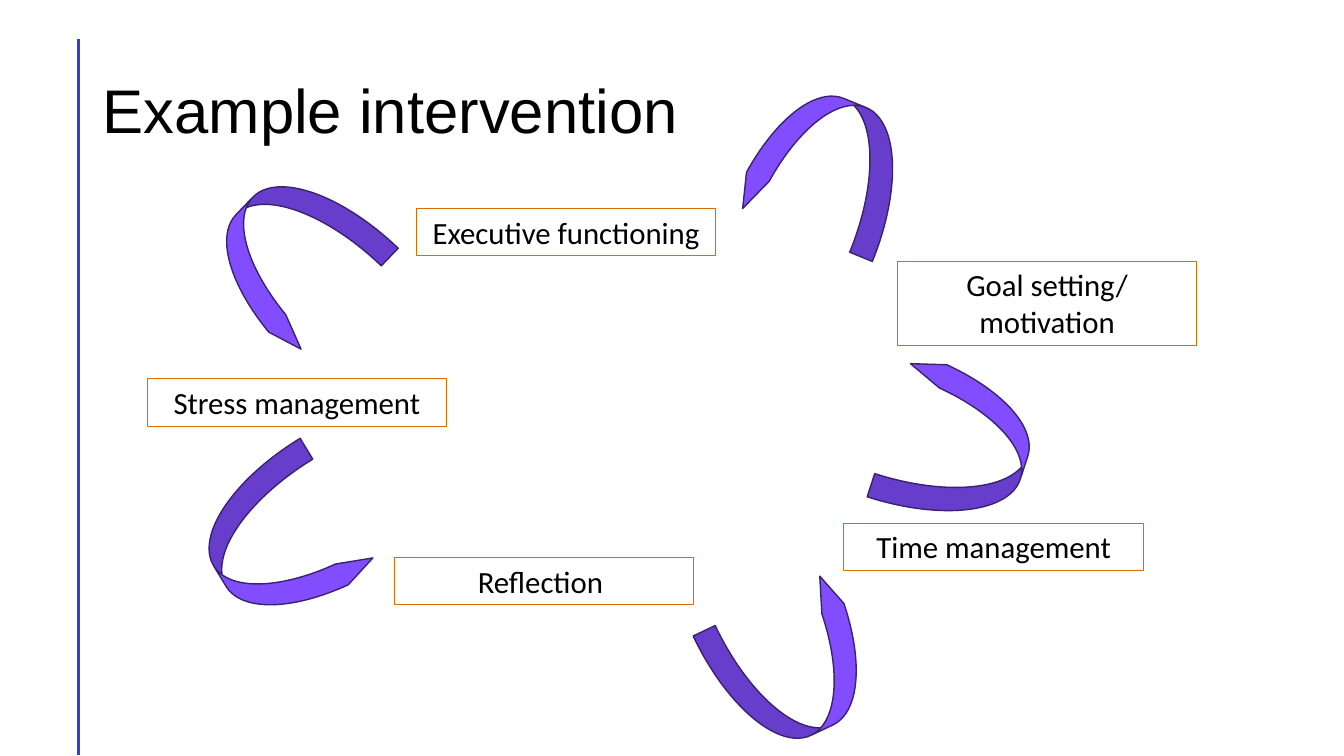
from typing import NamedTuple

from lxml.etree import SubElement
from pptx import Presentation
from pptx.dml.color import RGBColor
from pptx.enum.shapes import MSO_CONNECTOR, MSO_SHAPE
from pptx.enum.text import MSO_ANCHOR, MSO_AUTO_SIZE, PP_ALIGN
from pptx.oxml.ns import qn
from pptx.slide import Slide
from pptx.util import Emu, Pt

PX = 9144  # 100 px to the inch
COLORS = {
    "text": "000000",
    "margin": "2F3FDC",
    "box": "D96C00",
    "arrow": "814DFF",
    "arrow_edge": "392270",
}
LABEL_WIDTH = 297
ARROW_WIDTH, ARROW_HEIGHT = 139, 151
ARROW_ADJUSTMENTS = (0.326, 0.174, 0.25)


class Label(NamedTuple):
    text: str
    left: int
    top: int
    height: int = 47


class Arrow(NamedTuple):
    left: int
    top: int
    rotation: float


LABELS = [
    Label("Executive functioning", 413, 207),
    Label("Goal setting/ motivation", 890, 259, 84),
    Label("Stress management", 146, 376),
    Label("Time management", 837, 519),
    Label("Reflection ", 391, 553),
]
ARROWS = [
    Arrow(223, 177, 43.9),
    Arrow(208, 460, 328.7),
    Arrow(716, 586, 244.7),
    Arrow(752, 91, 112.2),
    Arrow(880, 367, 198),
]


def px(length: int) -> Emu:
    return Emu(length * PX)


def color(name: str) -> RGBColor:
    return RGBColor.from_string(COLORS[name])


def draw_margin_line(slide: Slide) -> None:
    margin = slide.shapes.add_connector(
        MSO_CONNECTOR.STRAIGHT, px(78), px(39), px(78), px(749))
    margin.line.color.rgb = color("margin")
    margin.line.width = Pt(2)
    SubElement(margin._element.spPr, qn("a:effectLst"))


def draw_title(slide: Slide, text: str) -> None:
    title = slide.shapes.add_textbox(px(92), px(40), px(1150), px(145))
    frame = title.text_frame
    frame.word_wrap = True
    frame.vertical_anchor = MSO_ANCHOR.MIDDLE
    heading = frame.paragraphs[0]
    heading.text = text
    heading.line_spacing = 0.9
    heading.font.name = "Arial"
    heading.font.size = Pt(44)
    heading.font.color.rgb = color("text")


def draw_label(slide: Slide, label: Label) -> None:
    box = slide.shapes.add_textbox(
        px(label.left), px(label.top), px(LABEL_WIDTH), px(label.height))
    box.line.color.rgb = color("box")
    box.line.width = Pt(0.75)
    frame = box.text_frame
    frame.word_wrap = True
    frame.auto_size = MSO_AUTO_SIZE.SHAPE_TO_FIT_TEXT
    caption = frame.paragraphs[0]
    caption.text = label.text
    caption.alignment = PP_ALIGN.CENTER
    caption.font.name = "Calibri"
    caption.font.size = Pt(22)
    caption.font.color.rgb = color("text")


def draw_arrow(slide: Slide, arrow: Arrow) -> None:
    curve = slide.shapes.add_shape(
        MSO_SHAPE.CURVED_RIGHT_ARROW,
        px(arrow.left), px(arrow.top), px(ARROW_WIDTH), px(ARROW_HEIGHT))
    curve.shadow.inherit = False
    curve.rotation = arrow.rotation
    for index, value in enumerate(ARROW_ADJUSTMENTS):
        curve.adjustments[index] = value
    curve.fill.solid()
    curve.fill.fore_color.rgb = color("arrow")
    curve.line.color.rgb = color("arrow_edge")
    curve.line.width = Pt(1)


def main() -> None:
    deck = Presentation()
    deck.slide_width, deck.slide_height = px(1333), px(750)
    slide = deck.slides.add_slide(deck.slide_layouts[6])

    # Margin line and title
    draw_margin_line(slide)
    draw_title(slide, "Example intervention")

    # Cycle of topics
    for label in LABELS:
        draw_label(slide, label)
    for arrow in ARROWS:
        draw_arrow(slide, arrow)

    deck.save("out.pptx")


if __name__ == "__main__":
    main()
